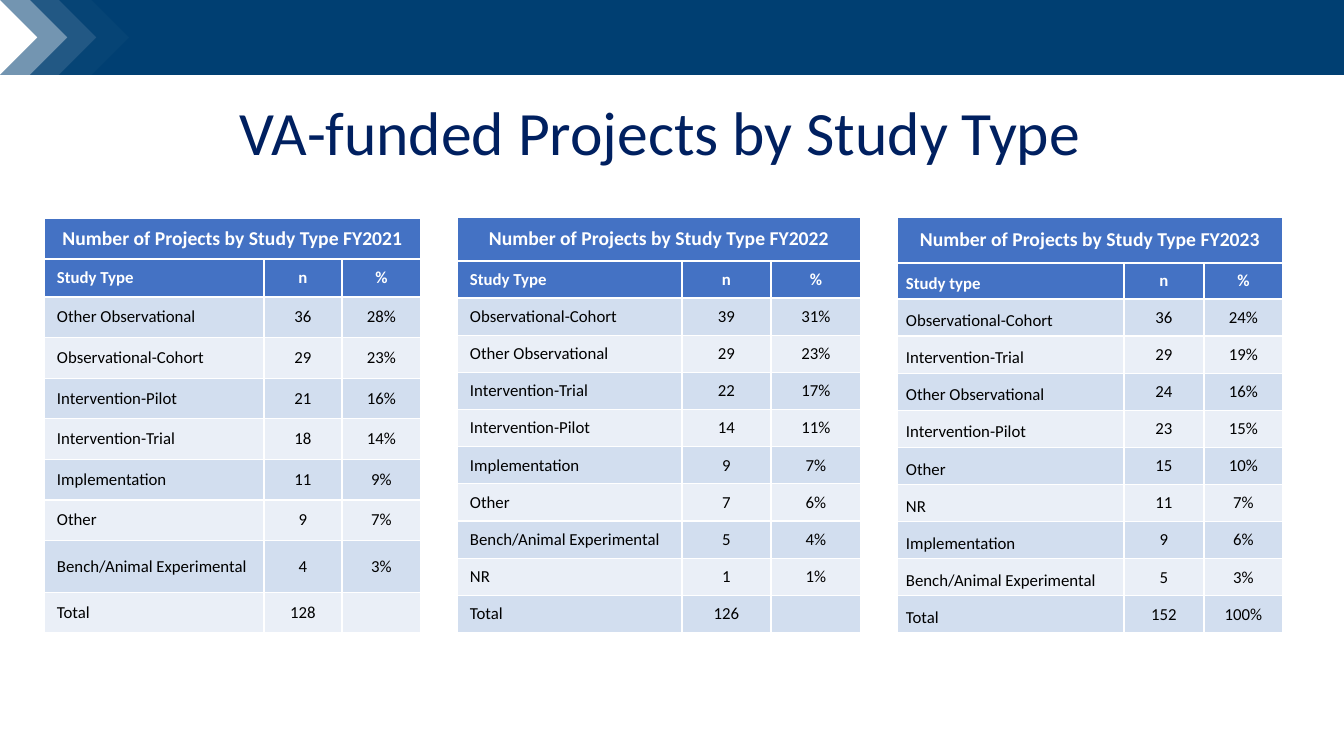
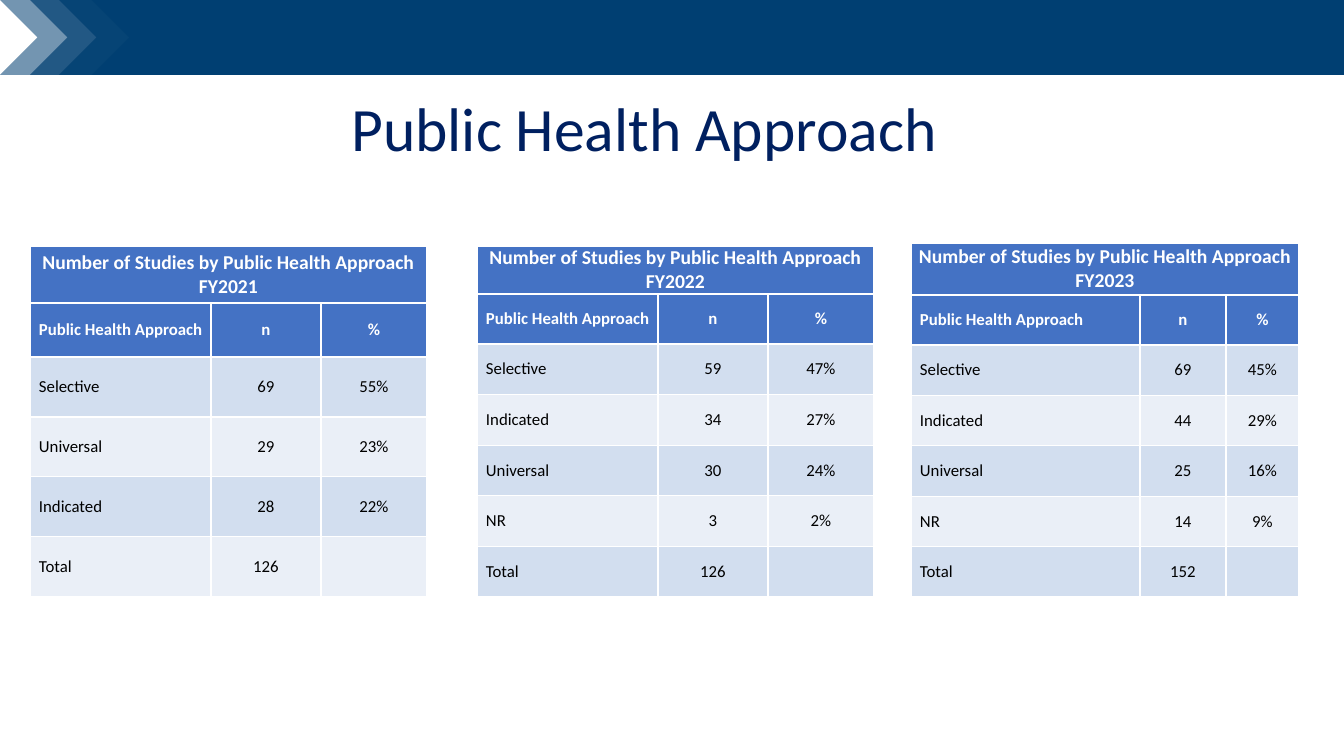
from dataclasses import dataclass

from lxml import etree
from pptx import Presentation
from pptx.dml.color import RGBColor
from pptx.enum.shapes import MSO_SHAPE as Shape
from pptx.enum.text import MSO_ANCHOR as Anchor, PP_ALIGN as Align
from pptx.oxml.ns import qn
from pptx.util import Emu, Pt

WIDE, HIGH = 1344, 756
SCALE = 12192000 / WIDE
BAND = 75
FONT = "Calibri"
NAVY, TITLE, HEAD = "003F72", "002060", "4472C4"
STRIPES = ("D2DEEF", "EAEFF7")
WHITE, BLACK = "FFFFFF", "000000"
CHEVRONS = ((0, 55), (30, 70), (59, 80), (92, 100))  # left edge, opacity %


@dataclass
class Grid:
    left: int
    top: int
    height: int
    cols: tuple[int, int, int]
    heads: tuple[int, int]
    title: str
    label: str
    rows: list[tuple[str, str, str]]
    inset: int = 9
    anchor: Anchor = Anchor.MIDDLE
    tall: int = -1  # index of the one taller body row
    extra: int = 0

    def heights(self) -> list[float]:
        """Header heights, then equal body rows filling the rest."""
        rest = self.height - sum(self.heads) - self.extra
        body = [rest / len(self.rows)] * len(self.rows)
        body[self.tall] += self.extra
        return [*self.heads, *body]


@dataclass
class Page:
    title: str
    left: int
    top: int
    grids: list[Grid]


def px(size: float) -> Emu:
    return Emu(round(size * SCALE))


def paint(fill, color: str) -> None:
    fill.solid()
    fill.fore_color.rgb = RGBColor.from_string(color)


def write(frame, text: str, *, size: int, color: str, bold: bool = False,
          align: Align = Align.CENTER, lead: float = 1.0) -> None:
    frame.word_wrap = True
    para = frame.paragraphs[0]
    para.alignment = align
    para.line_spacing = lead
    run = para.add_run()
    run.text = text
    font = run.font
    font.name, font.size, font.bold = FONT, Pt(size), bold
    font.color.rgb = RGBColor.from_string(color)


def block(slide, kind: Shape, left: int, alpha: int = 100) -> None:
    """Draw a band shape that runs from left to the slide's right edge."""
    shape = slide.shapes.add_shape(kind, px(left), 0, px(WIDE - left), px(BAND))
    shape.shadow.inherit = False
    shape.line.fill.background()
    paint(shape.fill, NAVY)
    if alpha < 100:
        color = shape.fill._xPr.find(".//" + qn("a:srgbClr"))
        etree.SubElement(color, qn("a:alpha")).set("val", str(alpha * 1000))


def band(slide) -> None:
    block(slide, Shape.RECTANGLE, 1285)
    for left, alpha in CHEVRONS:
        block(slide, Shape.CHEVRON, left, alpha)


def head(slide, page: Page) -> None:
    box = slide.shapes.add_textbox(px(page.left), px(page.top), px(1257), px(68))
    frame = box.text_frame
    frame.margin_left = frame.margin_right = 0
    frame.margin_top = frame.margin_bottom = 0
    write(frame, page.title, size=44, color=TITLE, lead=0.9)


def edge(cell) -> None:
    """Give a cell thin white borders."""
    props = cell._tc.get_or_add_tcPr()
    for side in ("lnL", "lnR", "lnT", "lnB"):
        line = etree.SubElement(props, qn("a:" + side), w=str(Pt(1)))
        fill = etree.SubElement(line, qn("a:solidFill"))
        etree.SubElement(fill, qn("a:srgbClr"), val=WHITE)


def draw(slide, grid: Grid) -> None:
    data = [(grid.title, "", ""), (grid.label, "n", "%"), *grid.rows]
    table = slide.shapes.add_table(
        len(data), 3, px(grid.left), px(grid.top),
        px(sum(grid.cols)), px(grid.height)).table
    table.first_row = table.horz_banding = False
    for col, width in zip(table.columns, grid.cols):
        col.width = px(width)
    for row, height in zip(table.rows, grid.heights()):
        row.height = px(height)
    table.cell(0, 0).merge(table.cell(0, 2))
    for r, texts in enumerate(data):
        top = r < 2
        for c, text in enumerate(texts):
            cell = table.cell(r, c)
            label = r > 0 and c == 0
            edge(cell)
            paint(cell.fill, HEAD if top else STRIPES[r % 2])
            cell.vertical_anchor = grid.anchor if label else Anchor.MIDDLE
            cell.margin_left = px(grid.inset if label else 0)
            cell.margin_right = cell.margin_top = 0
            cell.margin_bottom = px(5 if cell.vertical_anchor == Anchor.BOTTOM else 0)
            if text or not cell.is_spanned:
                write(cell.text_frame, text, size=12 if r else 14, bold=top,
                      color=WHITE if top else BLACK,
                      align=Align.LEFT if label else Align.CENTER)


STUDY = "Number of Projects by Study Type FY"
HEALTH = "Number of Studies by Public Health Approach FY"
PHA = "Public Health Approach"

PAGES = [
    Page("VA-funded Projects by Study Type", 32, 102, [
        Grid(44, 218, 415, (220, 78, 79), (41, 38), STUDY + "2021", "Study Type", [
            ("Other Observational", "36", "28%"),
            ("Observational-Cohort", "29", "23%"),
            ("Intervention-Pilot", "21", "16%"),
            ("Intervention-Trial", "18", "14%"),
            ("Implementation", "11", "9%"),
            ("Other", "9", "7%"),
            ("Bench/Animal Experimental", "4", "3%"),
            ("Total", "128", ""),
        ], inset=13, tall=6, extra=11),
        Grid(457, 217, 416, (225, 89, 90), (44, 37), STUDY + "2022", "Study Type", [
            ("Observational-Cohort", "39", "31%"),
            ("Other Observational", "29", "23%"),
            ("Intervention-Trial", "22", "17%"),
            ("Intervention-Pilot", "14", "11%"),
            ("Implementation", "9", "7%"),
            ("Other", "7", "6%"),
            ("Bench/Animal Experimental", "5", "4%"),
            ("NR", "1", "1%"),
            ("Total", "126", ""),
        ], inset=13),
        Grid(897, 217, 416, (227, 80, 79), (46, 36), STUDY + "2023", "Study type", [
            ("Observational-Cohort", "36", "24%"),
            ("Intervention-Trial", "29", "19%"),
            ("Other Observational", "24", "16%"),
            ("Intervention-Pilot", "23", "15%"),
            ("Other", "15", "10%"),
            ("NR", "11", "7%"),
            ("Implementation", "9", "6%"),
            ("Bench/Animal Experimental", "5", "3%"),
            ("Total", "152", "100%"),
        ], anchor=Anchor.BOTTOM),
    ]),
    Page("Public Health Approach", 16, 98, [
        Grid(30, 246, 351, (181, 110, 106), (57, 54), HEALTH + "2021", PHA, [
            ("Selective", "69", "55%"),
            ("Universal", "29", "23%"),
            ("Indicated", "28", "22%"),
            ("Total", "126", ""),
        ]),
        Grid(477, 246, 351, (181, 110, 106), (48, 50), HEALTH + "2022", PHA, [
            ("Selective", "59", "47%"),
            ("Indicated", "34", "27%"),
            ("Universal", "30", "24%"),
            ("NR", "3", "2%"),
            ("Total", "126", ""),
        ]),
        Grid(911, 243, 354, (229, 86, 73), (52, 50), HEALTH + "2023", PHA, [
            ("Selective", "69", "45%"),
            ("Indicated", "44", "29%"),
            ("Universal", "25", "16%"),
            ("NR", "14", "9%"),
            ("Total", "152", ""),
        ]),
    ]),
]


def main() -> None:
    deck = Presentation()
    deck.slide_width, deck.slide_height = px(WIDE), px(HIGH)
    for page in PAGES:
        slide = deck.slides.add_slide(deck.slide_layouts[6])
        band(slide)
        head(slide, page)
        for grid in page.grids:
            draw(slide, grid)
    deck.save("out.pptx")


if __name__ == "__main__":
    main()
